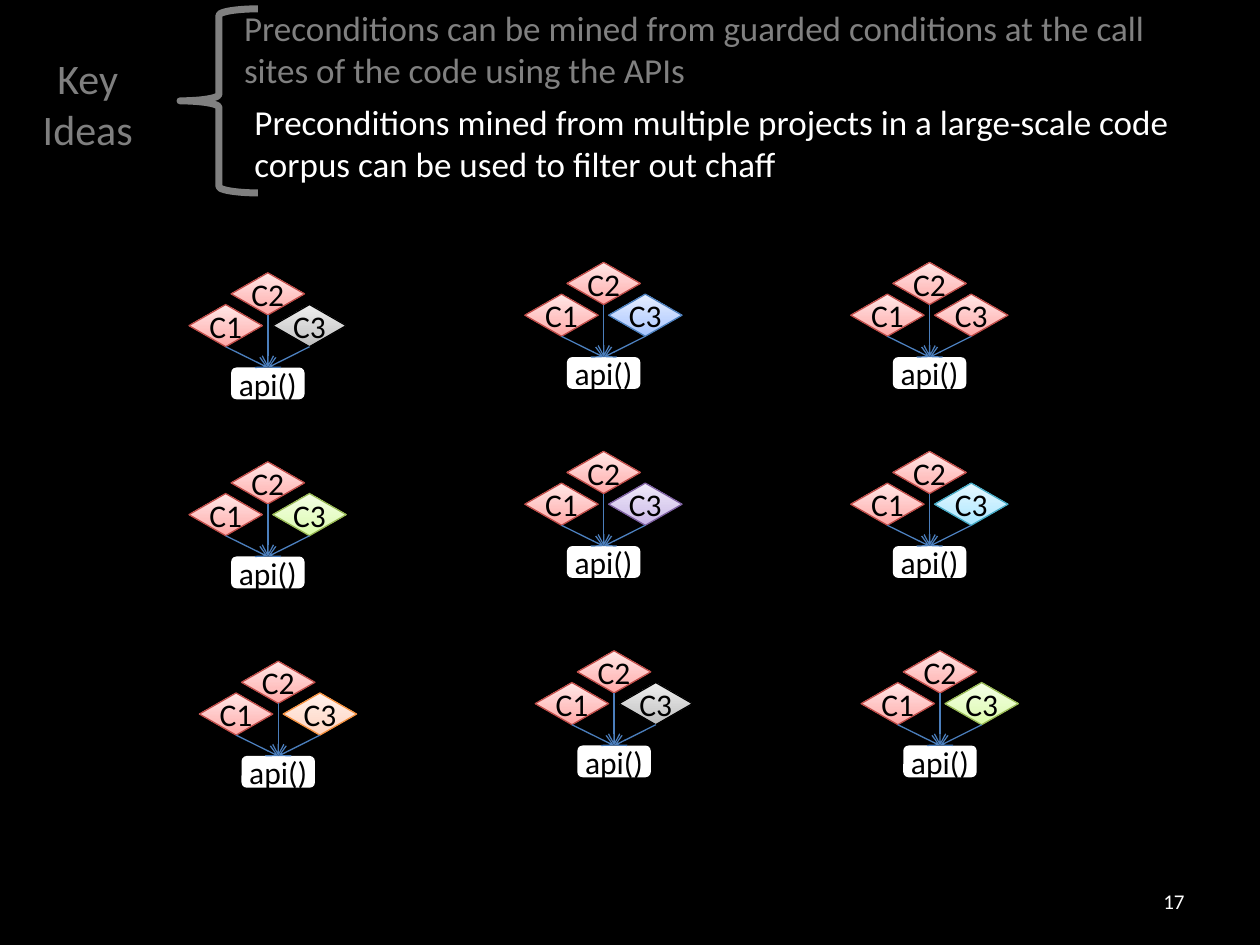
import copy

import lxml.etree
import pptx
import pptx.dml.color
import pptx.enum.shapes
import pptx.enum.text
import pptx.oxml.ns
import pptx.util

Cm, Pt = pptx.util.Cm, pptx.util.Pt
RGB = pptx.dml.color.RGBColor.from_string
SHAPE = pptx.enum.shapes.MSO_SHAPE
ALIGN = pptx.enum.text.PP_ALIGN
ANCHOR = pptx.enum.text.MSO_ANCHOR
qn = pptx.oxml.ns.qn


class Theme:
    font = "Calibri"
    black, white, gray, dim = "000000", "FFFFFF", "808080", "7F7F7F"
    arrow = "4B7EBC"
    title, body, node, number = 24, 20, 18, 12
    # Condition colours: outline, then gradient stops from bottom to top
    red = ("BF4C48", "FFA6A5", "FFC0BF", "FFE7E7")
    silver = ("000000", "BDBDBD", "D1D1D1", "EEEEEE")
    blue = ("4B7EBC", "A4C4FF", "BFD4FF", "E6EEFF")
    green = ("98B955", "DAFDA7", "E4FCC2", "F5FFE7")
    purple = ("7D60A0", "C9B5E8", "D8CBEE", "F0EAF9")
    cyan = ("46AAC5", "A7E6FF", "C1EDFF", "E7F8FF")
    orange = ("F69240", "FFD2BD", "FFDED0", "FFF2ED")


def write(sp, text, size, color, align, anchor=ANCHOR.MIDDLE):
    tf = sp.text_frame
    tf.word_wrap = True
    tf.vertical_anchor = anchor
    tf.text = text
    p = tf.paragraphs[0]
    p.alignment = align
    r = p.runs[0]
    r.font.name, r.font.size = Theme.font, Pt(size)
    r.font.color.rgb = RGB(color)


def add_node(shapes, kind, text, x, y, w, h):
    sp = shapes.add_shape(kind, Cm(x), Cm(y), Cm(w), Cm(h))
    sp.shadow.inherit = False
    write(sp, text, Theme.node, Theme.black, ALIGN.CENTER)
    tf = sp.text_frame
    tf.margin_left = tf.margin_right = tf.margin_top = tf.margin_bottom = 0
    return sp


prs = pptx.Presentation()
prs.slide_width, prs.slide_height = Cm(25.4), Cm(19.05)
s = prs.slides.add_slide(prs.slide_layouts[6])
s.background.fill.solid()
s.background.fill.fore_color.rgb = RGB(Theme.black)

# Slide number
sp = s.shapes.add_textbox(Cm(18.2), Cm(17.66), Cm(5.93), Cm(1.01))
write(sp, "17", Theme.number, Theme.white, ALIGN.RIGHT)

# Grid of API call sites: the third condition differs from project to project
columns = [3.81, 10.58, 17.15]
rows = [5.29, 9.1, 13.12]
nudge = 0.21
third_conditions = [
    [Theme.silver, Theme.blue, Theme.red],
    [Theme.green, Theme.purple, Theme.cyan],
    [Theme.orange, Theme.silver, Theme.green],
]
for i, row in enumerate(third_conditions):
    for j, third in enumerate(row):
        x = columns[j] + (nudge if i == 2 else 0)
        y = rows[i] + (nudge if j == 0 else 0)
        shapes = s.shapes.add_group_shape().shapes

        # API call
        api = add_node(shapes, SHAPE.ROUNDED_RECTANGLE, "api()", x + 0.85, y + 1.91, 1.48, 0.64)
        api.fill.solid()
        api.fill.fore_color.rgb = RGB(Theme.white)
        api.line.fill.background()

        # Conditions, each with an arrow to the call
        for name, dx, dy, colors in [
            ("C1", 0, 0.64, Theme.red),
            ("C3", 1.69, 0.64, third),
            ("C2", 0.85, 0, Theme.red),
        ]:
            sp = add_node(shapes, SHAPE.DIAMOND, name, x + dx, y + dy, 1.48, 0.85)
            sp.line.color.rgb = RGB(colors[0])
            sp.line.width = Pt(0.75)
            sp.fill.gradient()
            sp.fill.gradient_angle = 90
            stops = sp._element.spPr.find(".//" + qn("a:gsLst"))
            stops.append(copy.deepcopy(stops[0]))
            for stop, position, color in zip(sp.fill.gradient_stops, (0, 0.35, 1), colors[1:]):
                stop.position = position
                stop.color.rgb = RGB(color)

            line = shapes.add_connector(
                pptx.enum.shapes.MSO_CONNECTOR.STRAIGHT,
                sp.left + sp.width // 2, sp.top + sp.height, api.left + api.width // 2, api.top)
            line.begin_connect(sp, 2)
            line.end_connect(api, 0)
            line.line.color.rgb = RGB(Theme.arrow)
            line.line.width = Pt(0.75)
            spPr = line._element.spPr
            lxml.etree.SubElement(spPr.find(qn("a:ln")), qn("a:tailEnd"), type="arrow")
            lxml.etree.SubElement(spPr, qn("a:effectLst"))

# Key ideas
brace = s.shapes.add_shape(SHAPE.LEFT_BRACE, Cm(3.63), Cm(0.18), Cm(1.57), Cm(3.71))
brace.shadow.inherit = False
brace.fill.background()
brace.line.color.rgb = RGB(Theme.gray)
brace.line.width = Pt(4)

for text, x, y, w, h, size, color, align in [
    ("Key Ideas", 0.08, 0.94, 3.38, 2.31, Theme.title, Theme.dim, ALIGN.CENTER),
    ("Preconditions can be mined from guarded conditions at the call sites of the code using the APIs",
     4.67, 0, 20.09, 1.96, Theme.body, Theme.gray, ALIGN.LEFT),
    ("Preconditions mined from multiple projects in a large-scale code corpus can be used to filter out chaff",
     4.88, 1.91, 20.52, 1.96, Theme.body, Theme.white, ALIGN.LEFT),
]:
    sp = s.shapes.add_textbox(Cm(x), Cm(y), Cm(w), Cm(h))
    write(sp, text, size, color, align, ANCHOR.TOP)

prs.save("out.pptx")
